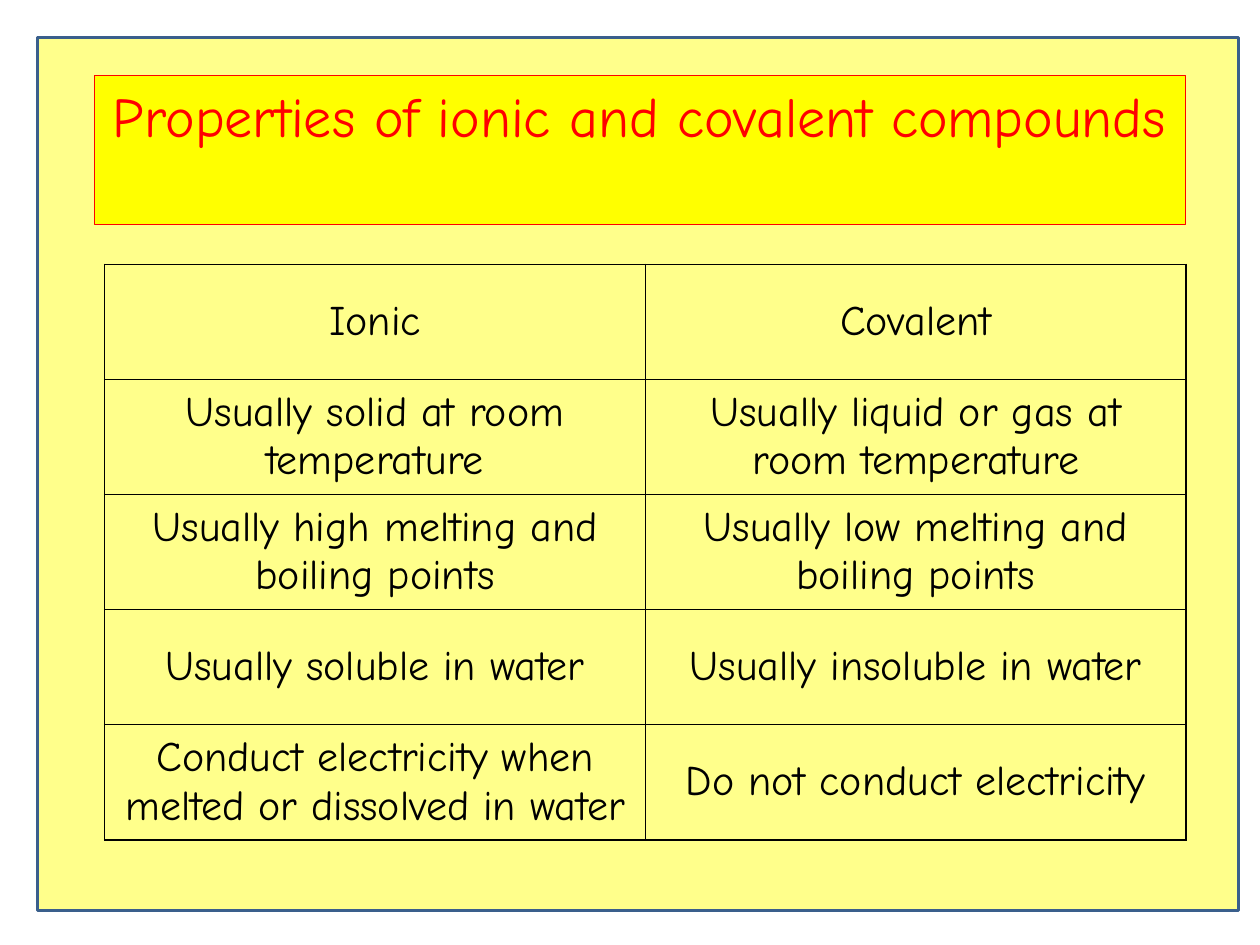
from lxml.etree import SubElement
from pptx import Presentation
from pptx.dml.color import RGBColor as Rgb
from pptx.enum.shapes import MSO_SHAPE as Shape
from pptx.enum.text import MSO_ANCHOR as Anchor, MSO_AUTO_SIZE as AutoSize, PP_ALIGN as Align
from pptx.oxml.ns import qn
from pptx.util import Cm, Pt

FONT = "Comic Neue"
COLOURS = {
    "panel": "FFFF8B",
    "frame": "3A5F8C",
    "banner": "FFFF00",
    "title": "FF0000",
    "ink": "000000",
}
PROPERTIES = [
    ("Ionic", "Covalent"),
    ("Usually solid at room temperature", "Usually liquid or gas at room temperature"),
    ("Usually high melting and boiling points", "Usually low melting and boiling points"),
    ("Usually soluble in water", "Usually insoluble in water"),
    ("Conduct electricity when melted or dissolved in water", "Do not conduct electricity"),
]
COLUMN_WIDTH = Cm(10.9)
ROW_HEIGHT = Cm(2.32)


def colour(name):
    return Rgb.from_string(COLOURS[name])


def paint(shape, fill, line, width):
    shape.fill.solid()
    shape.fill.fore_color.rgb = colour(fill)
    shape.line.color.rgb = colour(line)
    shape.line.width = Pt(width)


def write(frame, text, size, ink):
    para = frame.paragraphs[0]
    para.alignment = Align.CENTER
    span = para.add_run()
    span.text = text
    span.font.name = FONT
    span.font.size = Pt(size)
    span.font.bold = False
    span.font.color.rgb = colour(ink)


def add_panel(page):
    panel = page.shapes.add_shape(
        Shape.RECTANGLE, Cm(0.76), Cm(0.76), Cm(24.21), Cm(17.6))
    panel.shadow.inherit = False
    paint(panel, "panel", "frame", 2)
    # Send the panel behind the title placeholder
    page.shapes.title.element.addprevious(panel.element)


def format_title(page, text):
    title = page.shapes.title
    title.left, title.top, title.width, title.height = Cm(1.9), Cm(1.52), Cm(22), Cm(3)
    paint(title, "banner", "title", 0.75)
    frame = title.text_frame
    frame.word_wrap = True
    frame.auto_size = AutoSize.NONE
    frame.vertical_anchor = Anchor.TOP
    write(frame, text, 32, "title")


def add_borders(cell, width):
    properties = cell._tc.get_or_add_tcPr()
    for side in ("lnL", "lnR", "lnT", "lnB"):
        line = SubElement(properties, qn(f"a:{side}"), w=str(Pt(width)))
        fill = SubElement(line, qn("a:solidFill"))
        SubElement(fill, qn("a:srgbClr"), val=COLOURS["ink"])


def add_properties_table(page, rows):
    columns = len(rows[0])
    table = page.shapes.add_table(
        len(rows), columns, Cm(2.11), Cm(5.33),
        COLUMN_WIDTH * columns, ROW_HEIGHT * len(rows)).table
    table.first_row = table.horz_banding = False
    for column in table.columns:
        column.width = COLUMN_WIDTH
    for row, texts in zip(table.rows, rows):
        row.height = ROW_HEIGHT
        for cell, text in zip(row.cells, texts):
            add_borders(cell, 1)
            cell.fill.background()
            cell.vertical_anchor = Anchor.MIDDLE
            write(cell.text_frame, text, 24, "ink")


def main():
    deck = Presentation()
    deck.slide_width, deck.slide_height = Cm(25.4), Cm(19.05)
    page = deck.slides.add_slide(deck.slide_layouts[5])

    # Background panel and title banner
    add_panel(page)
    format_title(page, "Properties of ionic and covalent compounds")

    # Comparison of the two compound types
    add_properties_table(page, PROPERTIES)

    deck.save("out.pptx")


if __name__ == "__main__":
    main()
